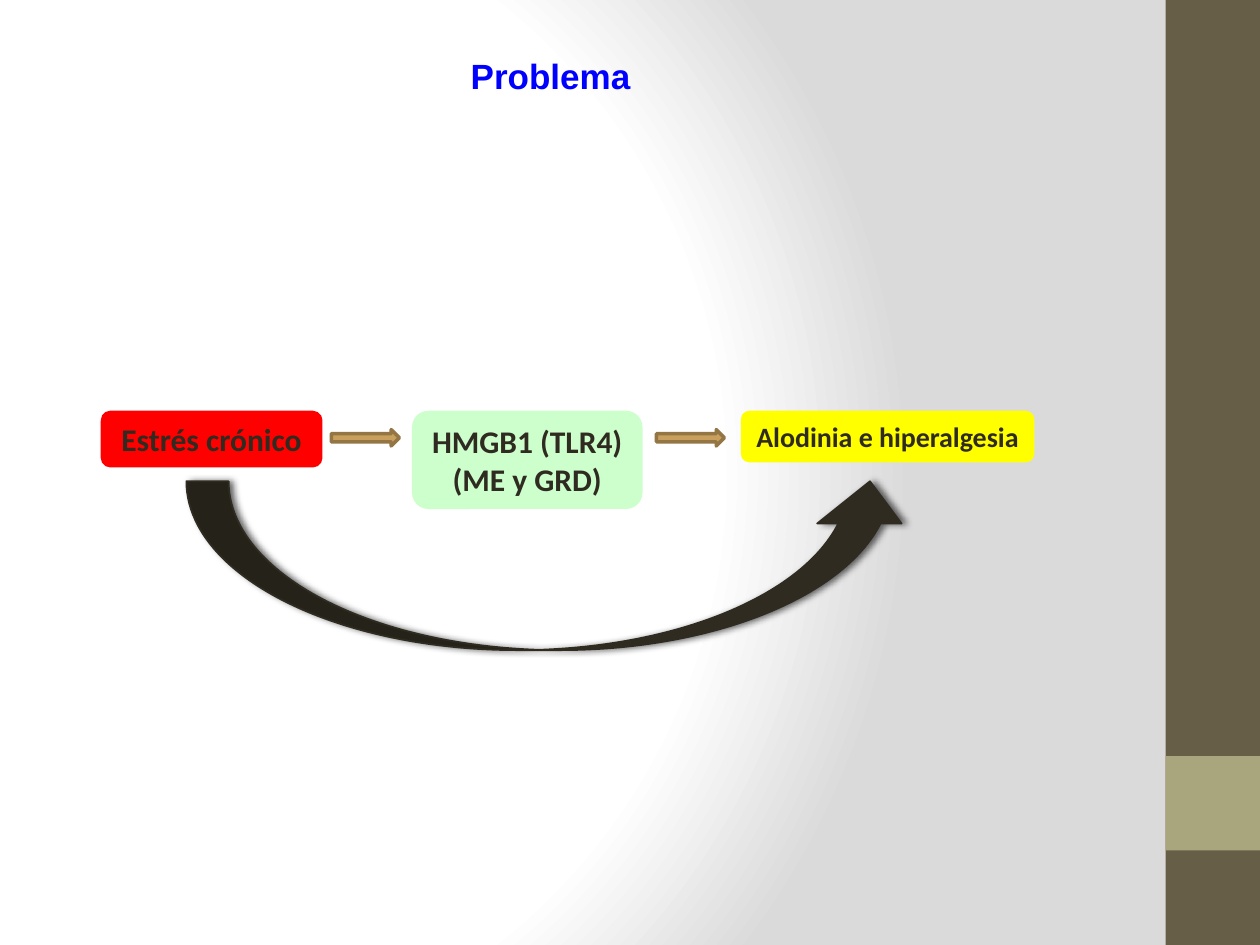
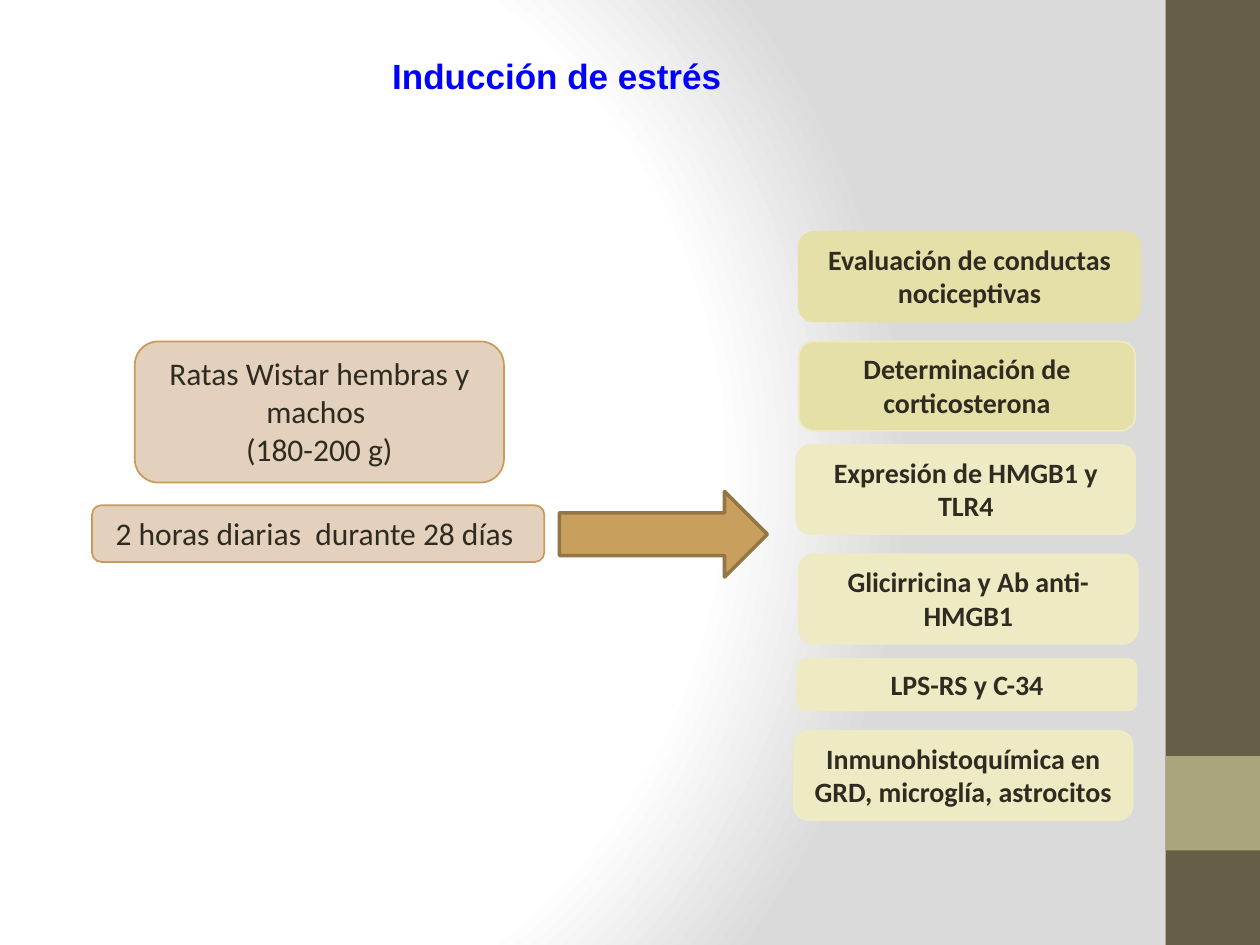
"""Builds two slides about chronic stress and pain."""
from lxml.etree import SubElement
from pptx import Presentation
from pptx.dml.color import RGBColor
from pptx.enum.shapes import MSO_SHAPE
from pptx.enum.text import MSO_ANCHOR, MSO_AUTO_SIZE, PP_ALIGN
from pptx.oxml import parse_xml
from pptx.oxml.ns import nsdecls, qn
from pptx.util import Inches, Pt

INK = RGBColor(0x2F, 0x2B, 0x20)
TITLE_BLUE = RGBColor(0x00, 0x00, 0xFF)
BAND_BROWN = RGBColor(0x67, 0x5E, 0x47)
BAND_OLIVE = RGBColor(0xA9, 0xA5, 0x7C)
ARROW_FILL = RGBColor(0xC8, 0x9F, 0x5D)
ARROW_LINE = RGBColor(0x94, 0x76, 0x45)
RED = RGBColor(0xFF, 0x00, 0x00)
YELLOW = RGBColor(0xFF, 0xFF, 0x00)
GREEN = RGBColor(0xCC, 0xFF, 0xCC)
BEIGE = RGBColor(0xE3, 0xD1, 0xBD)
BEIGE_LINE = RGBColor(0xC6, 0x9C, 0x58)
SAND = RGBColor(0xE4, 0xE0, 0xA7)
CREAM = RGBColor(0xED, 0xEA, 0xC4)

GRADIENT = f"""<a:gradFill {nsdecls('a')} rotWithShape="1"><a:gsLst>
<a:gs pos="0"><a:srgbClr val="FFFFFF"/></a:gs>
<a:gs pos="75000"><a:srgbClr val="FFFFFF"/></a:gs>
<a:gs pos="100000"><a:srgbClr val="DADADA"/></a:gs></a:gsLst>
<a:path path="circle"><a:fillToRect l="20000" t="50000" r="100000" b="50000"/></a:path>
</a:gradFill>"""


def set_background(deck):
    """Give the slide master the round white-to-grey gradient."""
    master = deck.slide_master
    master.background.fill.solid()
    properties = master.element.find(".//" + qn("p:bgPr"))
    properties.replace(properties[0], parse_xml(GRADIENT))


def add_shape(page, kind, place, fill, line=None, line_width=1):
    """Add a flat preset shape at (left, top, width, height) in inches."""
    shape = page.shapes.add_shape(kind, *map(Inches, place))
    shape.shadow.inherit = False
    shape.fill.solid()
    shape.fill.fore_color.rgb = fill
    if line is None:
        shape.line.fill.background()
    else:
        shape.line.color.rgb = line
        shape.line.width = Pt(line_width)
    return shape


def write(box, lines, size, font="Calibri", color=INK, bold=True, wrap=True):
    """Write centred paragraphs into a box."""
    frame = box.text_frame
    frame.word_wrap = wrap
    frame.auto_size = MSO_AUTO_SIZE.SHAPE_TO_FIT_TEXT
    for index, line in enumerate(lines):
        para = frame.add_paragraph() if index else frame.paragraphs[0]
        para.alignment = PP_ALIGN.CENTER
        span = para.add_run()
        span.text = line
        span.font.name = font
        span.font.size = Pt(size)
        span.font.bold = bold
        span.font.color.rgb = color


def add_label(page, place, lines, size, fill, line=None, bold=True, wrap=True):
    """Add a rounded box with text."""
    box = add_shape(page, MSO_SHAPE.ROUNDED_RECTANGLE, place, fill, line)
    box.text_frame.vertical_anchor = MSO_ANCHOR.TOP
    write(box, lines, size, bold=bold, wrap=wrap)


def add_arrow(page, place):
    """Add a tan block arrow pointing right."""
    add_shape(page, MSO_SHAPE.RIGHT_ARROW, place, ARROW_FILL, ARROW_LINE, 2)


def add_curved_arrow(page, place):
    """Add the dark curved arrow with its soft shadow."""
    arrow = add_shape(page, MSO_SHAPE.CURVED_UP_ARROW, place, INK, INK)
    effects = arrow.element.spPr.find(qn("a:effectLst"))
    shadow = SubElement(effects, qn("a:outerShdw"), blurRad=str(Pt(4)),
                        dist=str(Pt(2)), dir="0", rotWithShape="0")
    color = SubElement(shadow, qn("a:srgbClr"), val="000000")
    SubElement(color, qn("a:alpha"), val="60000")


def add_page(deck, title, title_left):
    """Add a slide with the side bands and a title."""
    page = deck.slides.add_slide(deck.slide_layouts[6])
    add_shape(page, MSO_SHAPE.RECTANGLE, (9.25, 0, 0.75, 7.5), BAND_BROWN)
    add_shape(page, MSO_SHAPE.RECTANGLE, (9.25, 6, 0.75, 0.75), BAND_OLIVE)
    box = page.shapes.add_textbox(*map(Inches, (title_left, 0.38, 4.48, 0.44)))
    write(box, [title], 20, "Arial", TITLE_BLUE)
    return page


def build_problem(deck):
    """Build the chain from chronic stress to pain."""
    page = add_page(deck, "Problema", 2.13)
    for left in (2.63, 5.21):
        add_arrow(page, (left, 3.41, 0.54, 0.13))
    chain = [
        (0.8, 1.76, 0.45, ["Estrés crónico"], 18, RED),
        (3.27, 1.83, 0.78, ["HMGB1 (TLR4)", "(ME y GRD)"], 18, GREEN),
        (5.88, 2.33, 0.41, ["Alodinia e hiperalgesia"], 16, YELLOW),
    ]
    for left, width, height, lines, size, fill in chain:
        add_label(page, (left, 3.26, width, height), lines, size, fill, wrap=False)
    add_curved_arrow(page, (1.48, 3.82, 5.76, 1.34))


def build_induction(deck):
    """Build the stress protocol and the list of measurements."""
    page = add_page(deck, "Inducción de estrés", 2.18)
    add_arrow(page, (4.44, 3.9, 1.65, 0.68))
    protocol = [
        ((1.07, 2.71, 2.93, 1.12), ["Ratas Wistar hembras y machos ", "(180-200 g)"]),
        ((0.73, 4.01, 3.59, 0.45), ["2 horas diarias  durante 28 días "]),
    ]
    for place, lines in protocol:
        add_label(page, place, lines, 18, BEIGE, BEIGE_LINE, bold=False)
    measurements = [
        ((6.34, 1.84, 2.71, 0.71), "Evaluación de conductas nociceptivas", SAND, SAND),
        ((6.34, 2.71, 2.67, 0.71), "Determinación de corticosterona", SAND, CREAM),
        ((6.32, 3.53, 2.69, 0.71), "Expresión de HMGB1 y TLR4", CREAM, CREAM),
        ((6.34, 4.4, 2.69, 0.71), "Glicirricina y Ab anti-HMGB1", CREAM, CREAM),
        ((6.33, 5.23, 2.69, 0.41), "LPS-RS y C-34", CREAM, CREAM),
        ((6.3, 5.8, 2.69, 0.71), "Inmunohistoquímica en GRD, microglía, astrocitos",
         CREAM, CREAM),
    ]
    for place, text, fill, line in measurements:
        add_label(page, place, [text], 16, fill, line)


def main():
    """Build and save the deck."""
    deck = Presentation()
    deck.slide_width, deck.slide_height = Inches(10), Inches(7.5)
    set_background(deck)
    build_problem(deck)
    build_induction(deck)
    deck.save("out.pptx")


if __name__ == "__main__":
    main()
